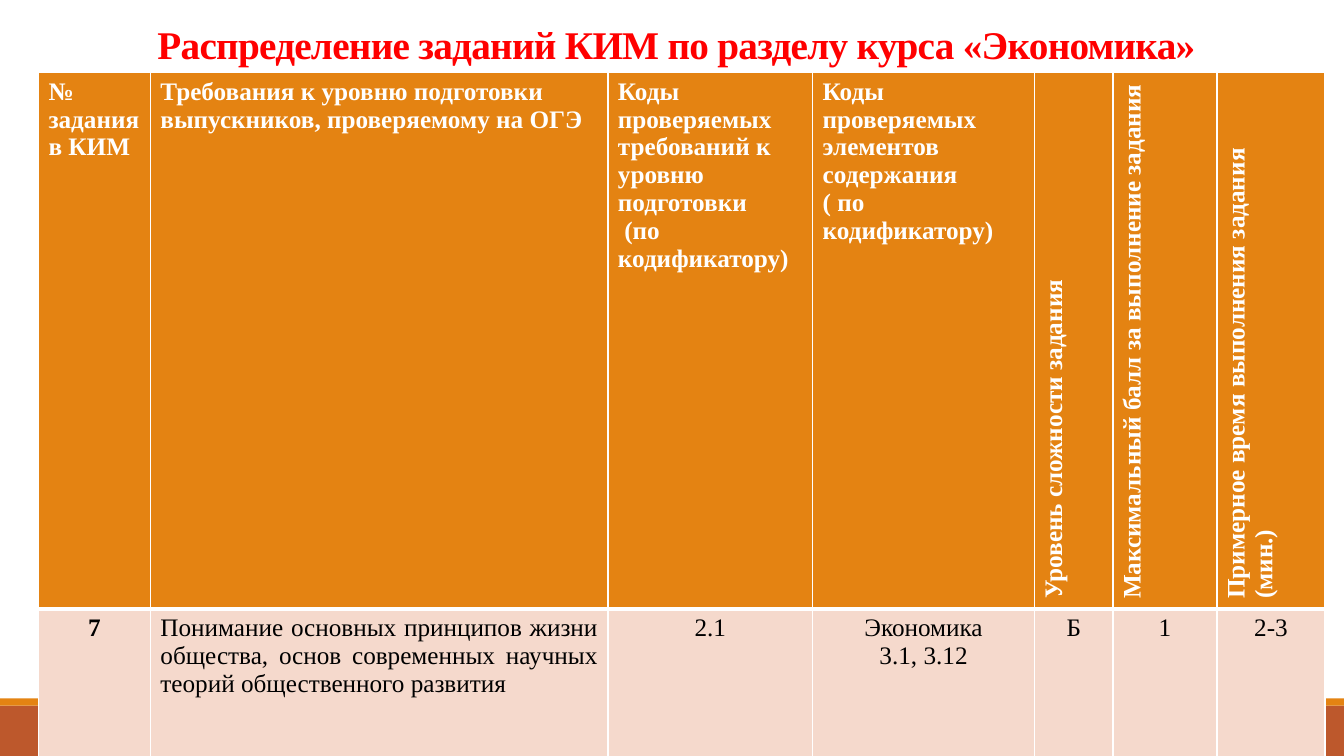
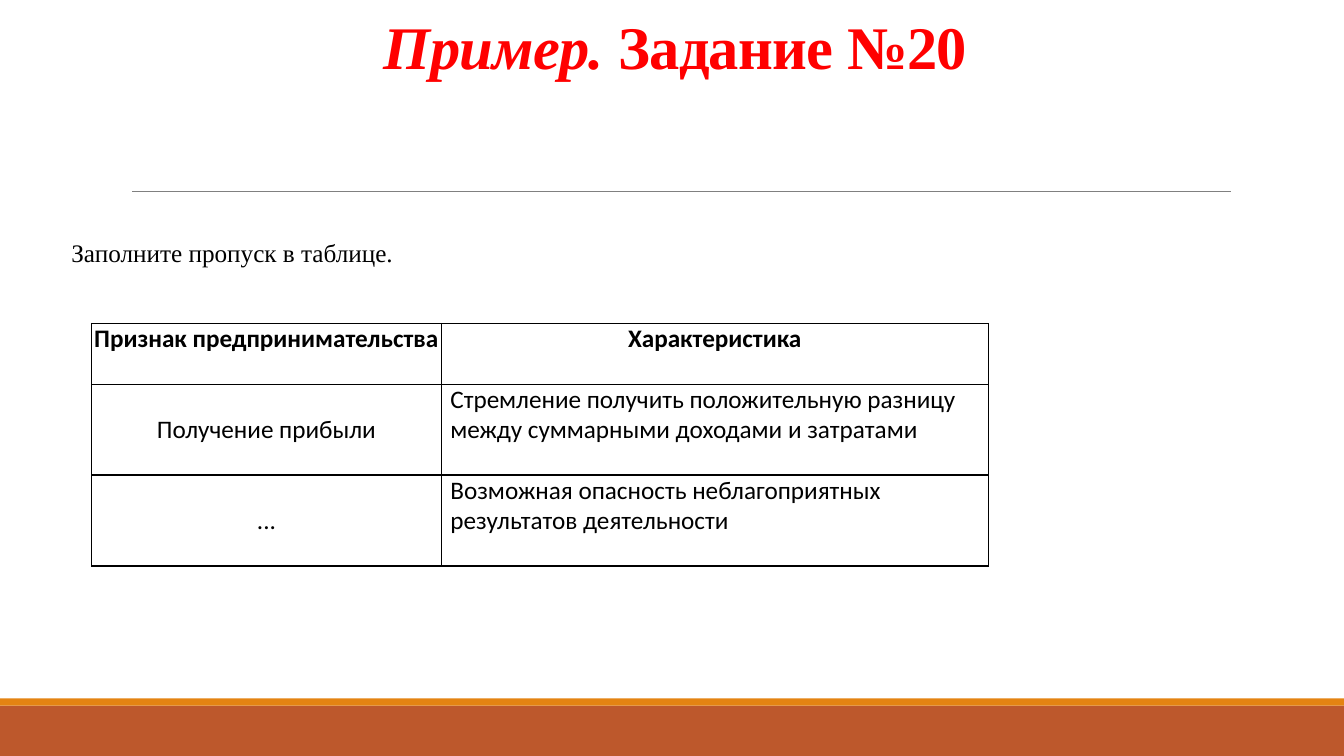
"""Builds two slides on the economics section of the exam."""
from dataclasses import dataclass

from lxml.etree import SubElement
from pptx import Presentation
from pptx.dml.color import RGBColor as RGB
from pptx.enum.shapes import MSO_CONNECTOR as CONN, MSO_SHAPE as SHAPE
from pptx.enum.text import MSO_ANCHOR as ANCHOR, MSO_AUTO_SIZE as FIT, PP_ALIGN as ALIGN
from pptx.oxml.ns import qn
from pptx.util import Cm, Pt


@dataclass(frozen=True)
class Theme:
    """Colours, fonts and type sizes of the slides."""
    rust: str = "BD582C"
    orange: str = "E48312"
    pale: str = "F5D9CC"
    grey: str = "808080"
    red: str = "FF0000"
    black: str = "000000"
    white: str = "FFFFFF"
    serif: str = "Times New Roman"
    sans: str = "Calibri"
    body: float = 18
    title: float = 28
    big_title: float = 43.2


T = Theme()
WIDTH, HEIGHT = 33.87, 19.05
TITLE_ONLY = 5


def style(p, size, name, color, bold=False, align=None):
    """Sets the font and alignment of a paragraph."""
    f = p.font
    f.size, f.name, f.bold = Pt(size), name, bold
    f.color.rgb = RGB.from_string(color)
    p.alignment = align


def add_band(slide, top, height, color):
    """Adds a full-width footer band."""
    sp = slide.shapes.add_shape(SHAPE.RECTANGLE, 0, Cm(top), Cm(WIDTH), Cm(height))
    sp.shadow.inherit = False
    sp.fill.solid()
    sp.fill.fore_color.rgb = RGB.from_string(color)
    sp.line.fill.background()


def add_rule(slide):
    """Adds the thin line under the title area."""
    line = slide.shapes.add_connector(CONN.STRAIGHT, Cm(3.33), Cm(4.83), Cm(31.01), Cm(4.83))
    line.line.color.rgb = RGB.from_string(T.grey)
    line.line.width = Pt(0.5)
    SubElement(line._element.spPr, qn("a:effectLst"))


def set_title(slide, runs, box, size):
    """Places the title and fills it with (text, italic) runs."""
    sp = slide.shapes.title
    sp.left, sp.top, sp.width, sp.height = map(Cm, box)
    tf = sp.text_frame
    tf.word_wrap, tf.auto_size, tf.vertical_anchor = True, FIT.NONE, ANCHOR.BOTTOM
    p = tf.paragraphs[0]
    style(p, size, T.serif, T.red, True, ALIGN.CENTER)
    p.line_spacing = 0.85
    for text, italic in runs:
        r = p.add_run()
        r.text, r.font.italic = text, italic
        r._r.get_or_add_rPr().set("spc", "-50")


def add_slide(prs, title, box, size):
    """Adds a slide with its bands, rule and title."""
    slide = prs.slides.add_slide(prs.slide_layouts[TITLE_ONLY])
    add_band(slide, 17.78, 1.27, T.rust)
    add_band(slide, 17.6, 0.18, T.orange)
    add_rule(slide)
    set_title(slide, title, box, size)
    return slide


def add_text(slide, text, box):
    """Adds a line of body text."""
    tf = slide.shapes.add_textbox(*map(Cm, box)).text_frame
    tf.word_wrap, tf.vertical_anchor = True, ANCHOR.MIDDLE
    tf.text = text
    style(tf.paragraphs[0], T.body, T.serif, T.black)


def set_borders(cell, color, **widths):
    """Draws the cell borders, 1 pt unless a side (L, R, T, B) says otherwise."""
    tc_pr = cell._tc.get_or_add_tcPr()
    for side in "LRTB":
        ln = SubElement(tc_pr, qn(f"a:ln{side}"), w=str(Pt(widths.get(side, 1))))
        SubElement(SubElement(ln, qn("a:solidFill")), qn("a:srgbClr"), val=color)


def fill_cell(cell, text, name, color, bold, align, fill=None):
    """Writes and formats one table cell."""
    cell.text = text
    for p in cell.text_frame.paragraphs:
        style(p, T.body, name, color, bold, align)
    if fill:
        cell.fill.solid()
        cell.fill.fore_color.rgb = RGB.from_string(fill)
    else:
        cell.fill.background()


def add_grid(slide, left, top, cols, rows):
    """Adds an unstyled table with the given column widths and row heights."""
    frame = slide.shapes.add_table(len(rows), len(cols), Cm(left), Cm(top),
                                   Cm(sum(cols)), Cm(sum(rows)))
    table = frame.table
    table.first_row = table.horz_banding = False
    for col, width in zip(table.columns, cols):
        col.width = Cm(width)
    for row, height in zip(table.rows, rows):
        row.height = Cm(height)
    return table


def add_task_table(slide):
    """Adds the table of exam tasks, with upright headings in the narrow columns."""
    columns = [
        (2.82, "№ задания в КИМ", "7"),
        (11.53, "Требования к уровню подготовки выпускников, проверяемому на ОГЭ",
         "Понимание основных принципов жизни общества, основ современных научных "
         "теорий общественного развития"),
        (5.16, "Коды проверяемых требований к уровню подготовки\n (по кодификатору)", "2.1"),
        (5.59, "Коды проверяемых элементов содержания\n( по кодификатору)",
         "Экономика\n3.1, 3.12"),
        (1.98, "Уровень сложности задания", "Б"),
        (2.62, "Максимальный балл за выполнение задания", "1"),
        (2.72, "Примерное время выполнения задания (мин.)", "2-3"),
    ]
    table = add_grid(slide, 0.97, 1.83, [c[0] for c in columns], [13.49, 3.73])
    for i, (width, heading, value) in enumerate(columns):
        head, body = table.cell(0, i), table.cell(1, i)
        set_borders(head, T.white, B=3)
        set_borders(body, T.white, T=3)
        fill_cell(head, heading, T.serif, T.white, True, ALIGN.LEFT, T.orange)
        if width < 2.8:
            head._tc.get_or_add_tcPr().set("vert", "vert270")
        align = ALIGN.JUSTIFY if i == 1 else ALIGN.CENTER
        fill_cell(body, value, T.serif, T.black, i == 0, align, T.pale)


def add_feature_table(slide):
    """Adds the table of business features with a gap to fill."""
    rows = [
        ("Признак предпринимательства", "Характеристика"),
        ("Получение прибыли",
         "Стремление получить положительную разницу между суммарными доходами и затратами"),
        ("...", "Возможная опасность неблагоприятных результатов деятельности"),
    ]
    table = add_grid(slide, 2.31, 8.15, [8.81, 13.79], [1.53, 2.29, 2.29])
    for i, row in enumerate(rows):
        for j, text in enumerate(row):
            cell = table.cell(i, j)
            is_head, is_detail = i == 0, i > 0 and j == 1
            set_borders(cell, T.black)
            fill_cell(cell, text, T.sans, T.black, is_head,
                      ALIGN.LEFT if is_detail else ALIGN.CENTER)
            cell.margin_left = Cm(0.23 if is_detail else 0)
            cell.margin_right = cell.margin_top = cell.margin_bottom = 0
            cell.vertical_anchor = ANCHOR.TOP if is_head or is_detail else ANCHOR.MIDDLE


def main():
    """Builds and saves the presentation."""
    prs = Presentation()
    prs.slide_width, prs.slide_height = Cm(WIDTH), Cm(HEIGHT)

    tasks = add_slide(prs, [("Распределение заданий КИМ по разделу курса «Экономика»", False)],
                      (3.07, 0, 27.94, 1.83), T.title)
    add_task_table(tasks)

    example = add_slide(prs, [("Пример.", True), (" Задание №20", False)],
                        (3.05, 0.41, 27.94, 1.78), T.big_title)
    add_text(example, "Заполните пропуск в таблице.", (1.55, 5.84, 9.75, 1.02))
    add_feature_table(example)

    prs.save("out.pptx")


if __name__ == "__main__":
    main()
